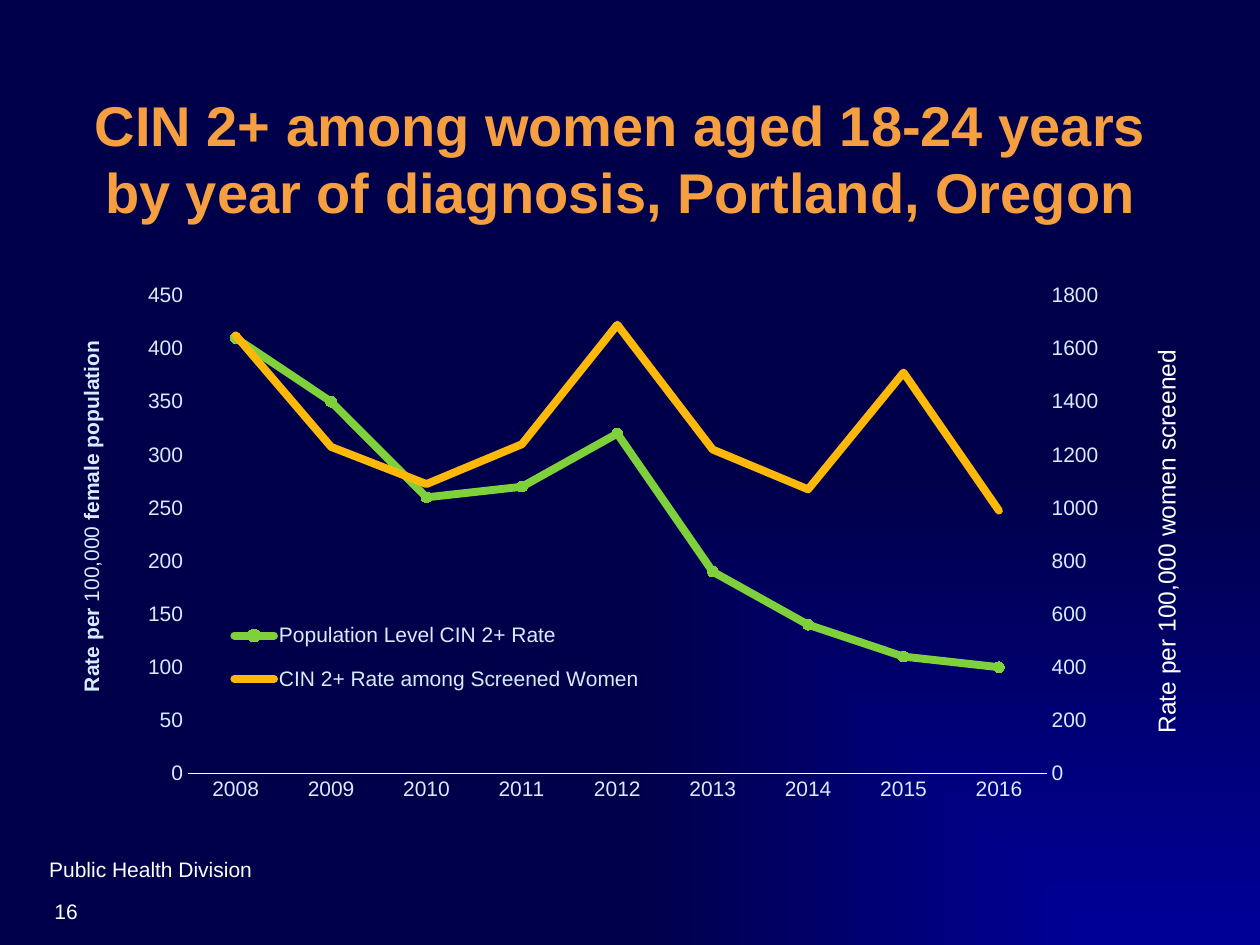
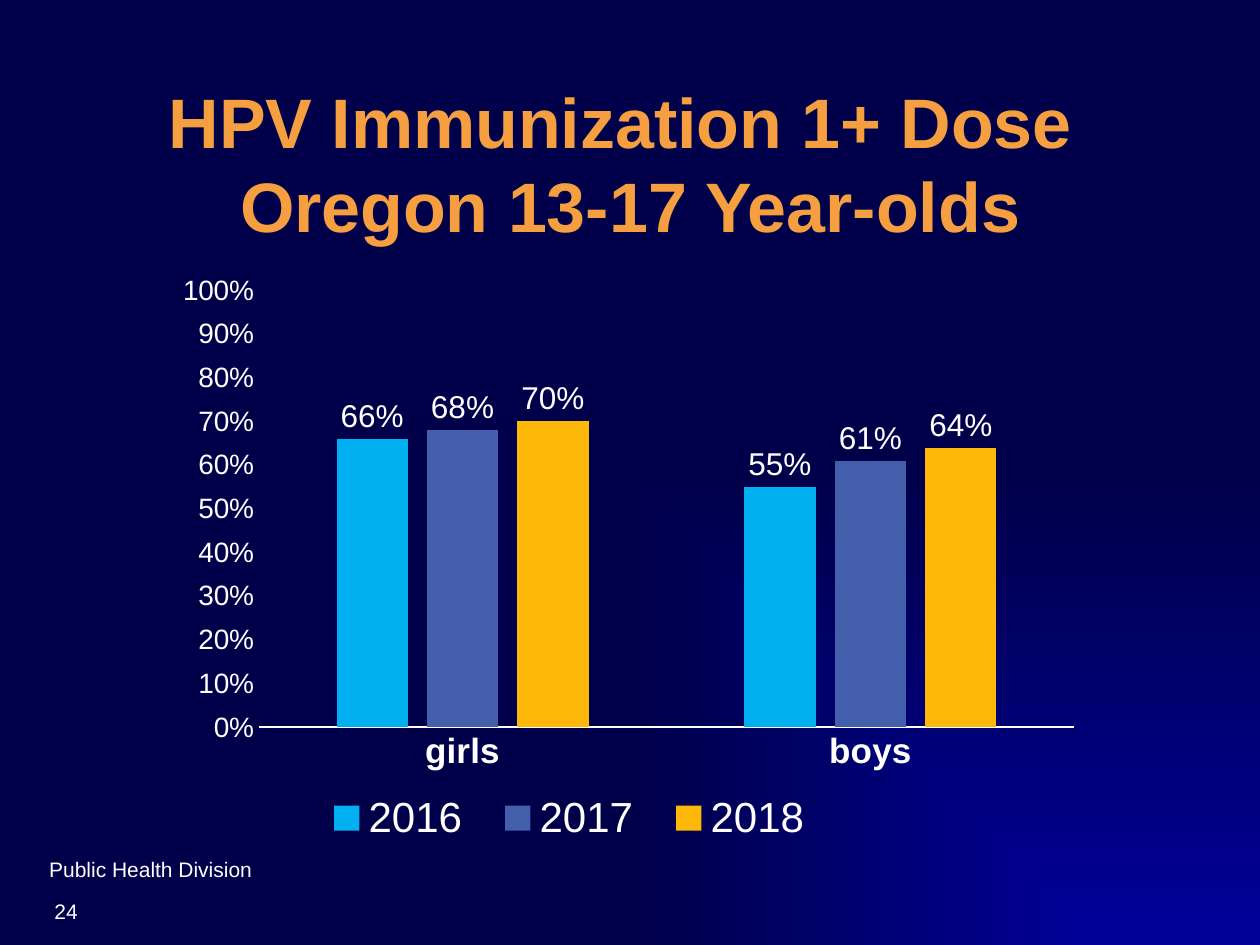
from copy import deepcopy

from lxml.etree import SubElement
from pptx import Presentation
from pptx.chart.data import CategoryChartData
from pptx.dml.color import RGBColor
from pptx.enum.chart import (XL_CHART_TYPE, XL_LABEL_POSITION, XL_LEGEND_POSITION,
                             XL_MARKER_STYLE, XL_TICK_MARK)
from pptx.enum.text import MSO_ANCHOR, MSO_AUTO_SIZE, PP_ALIGN
from pptx.oxml import parse_xml
from pptx.oxml.ns import nsdecls, qn
from pptx.util import Inches, Pt

CELL = Inches(1) // 12  # the slide is a grid of 120 columns by 90 rows
WHITE, ICE, ORANGE = "FFFFFF", "D6ECFF", "F59F41"
GREEN, AMBER, SKY, BLUE = "7FD13B", "FEB80A", "00B0F0", "435EAA"
DEEP, GLOW = "00004A", "000099"

FOOTER = {"size": 12, "color": WHITE}
TITLE_32 = {"size": 32, "color": ORANGE, "bold": True}
TITLE_40 = {**TITLE_32, "size": 40}
LINE_TEXT = {"size": 12, "color": ICE, "bold": False}


def rgb(hex_text):
    return RGBColor.from_string(hex_text)


def style_font(font, values):
    for name, value in {"name": "Arial", **values}.items():
        if name == "color":
            font.color.rgb = rgb(value)
        else:
            setattr(font, name, Pt(value) if name == "size" else value)


def grid(*cells):
    return [round(cell * CELL) for cell in cells]


def set_background(master):
    """Give every slide a glow that spreads from the bottom right corner."""
    master.background.fill.solid()
    frame = master._element.find(".//" + qn("p:bgPr"))
    stops = "".join(
        f'<a:gs pos="{position}"><a:srgbClr val="{color}"/></a:gs>'
        for position, color in ((0, GLOW), (100000, DEEP)))
    gradient = parse_xml(
        f'<a:gradFill {nsdecls("a")} rotWithShape="1"><a:gsLst>{stops}</a:gsLst>'
        '<a:path path="rect"><a:fillToRect l="100000" t="100000"/></a:path></a:gradFill>')
    frame.replace(frame.find(qn("a:solidFill")), gradient)


def add_text(page, cells, text, values, rotation=0):
    box = page.shapes.add_textbox(*grid(*cells))
    box.rotation = rotation
    box.text_frame.word_wrap = True
    span = box.text_frame.paragraphs[0].add_run()
    span.text = text
    style_font(span.font, values)


def add_page(deck, title, title_cells, title_style, number):
    page = deck.slides.add_slide(deck.slide_layouts[5])
    box = page.shapes.title
    for name, value in zip(("left", "top", "width", "height"), grid(*title_cells)):
        setattr(box, name, value)
    frame = box.text_frame
    frame.text = title
    frame.auto_size = MSO_AUTO_SIZE.NONE
    frame.vertical_anchor = MSO_ANCHOR.MIDDLE
    frame.paragraphs[0].alignment = PP_ALIGN.CENTER
    for span in frame.paragraphs[0].runs:
        style_font(span.font, title_style)
    add_text(page, (3.5, 81, 46, 3.25), "Public Health Division", FOOTER)
    add_text(page, (4, 85, 25, 4), number, FOOTER)
    return page


def place(part, index, target=None, **shares):
    """Lay out a chart part by shares of the chart's size."""
    for old in part.findall(qn("c:layout")):
        part.remove(old)
    layout = parse_xml(f'<c:layout {nsdecls("c")}><c:manualLayout/></c:layout>')
    manual = layout[0]
    settings = {"layoutTarget": target} if target else {}
    settings.update({f"{key}Mode": "edge" for key in shares if key in "xy"})
    settings.update(shares)
    for name, value in settings.items():
        SubElement(manual, qn(f"c:{name}")).set("val", str(value))
    part.insert(index, layout)


def add_chart(page, kind, cells, categories, series, number_format):
    """series holds (name, values) pairs."""
    data = CategoryChartData(number_format=number_format)
    data.categories = categories
    for name, values in series:
        data.add_series(name, values)
    chart = page.shapes.add_chart(kind, *grid(*cells), data).chart
    chart.has_title = False
    style_font(chart.font, {"size": 10, "color": WHITE})
    chart.plots[0].vary_by_categories = False
    return chart


def style_axes(chart, category_style, value_style, line_color, top, step, number_format):
    values = chart.value_axis
    for axis, style in ((chart.category_axis, category_style), (values, value_style)):
        axis.has_major_gridlines = False
        axis.major_tick_mark = axis.minor_tick_mark = XL_TICK_MARK.NONE
        style_font(axis.tick_labels.font, style)
    line = chart.category_axis.format.line
    line.color.rgb = rgb(line_color)
    line.width = Pt(0.75)
    values.format.line.fill.background()
    values.minimum_scale, values.maximum_scale, values.major_unit = 0, top, step
    values.tick_labels.number_format = number_format
    values.tick_labels.number_format_is_linked = False


def add_legend(chart, style, **shares):
    chart.has_legend = True
    legend = chart.legend
    legend.position = XL_LEGEND_POSITION.BOTTOM
    legend.include_in_layout = False
    style_font(legend.font, style)
    place(legend._element, 1, **shares)


def style_line(series, color):
    series.smooth = False
    line = series.format.line
    line.color.rgb = rgb(color)
    line.width = Pt(4.5)
    series._element.find(f"{qn('c:spPr')}/{qn('a:ln')}").set("cap", "rnd")
    series.marker.style = XL_MARKER_STYLE.NONE


def add_right_axis(chart, top, step):
    """Move the last series to a second line plot with its own value axis."""
    area = chart._chartSpace.find(".//" + qn("c:plotArea"))
    first_plot = area.find(qn("c:lineChart"))
    second_plot = deepcopy(first_plot)
    first_plot.remove(first_plot.findall(qn("c:ser"))[-1])
    second_plot.remove(second_plot.find(qn("c:ser")))
    first_plot.addnext(second_plot)
    category = deepcopy(area.find(qn("c:catAx")))
    value = deepcopy(area.find(qn("c:valAx")))
    area.find(qn("c:valAx")).addnext(value)
    value.addnext(category)
    ids = ("50010", "50020")
    for link, axis_id in zip(second_plot.findall(qn("c:axId")), ids):
        link.set("val", axis_id)
    for axis, own, other in ((category, *ids), (value, *reversed(ids))):
        axis.find(qn("c:axId")).set("val", own)
        axis.find(qn("c:crossAx")).set("val", other)
    category.find(qn("c:delete")).set("val", "1")
    for tag, setting in (("axPos", "r"), ("crosses", "max"), ("majorUnit", str(step))):
        value.find(qn(f"c:{tag}")).set("val", setting)
    value.find(f"{qn('c:scaling')}/{qn('c:max')}").set("val", str(top))


def add_axis_title(axis, spans, **shares):
    """spans holds (text, bold) pairs."""
    title = axis.axis_title
    para = title.text_frame.paragraphs[0]
    for text, bold in spans:
        span = para.add_run()
        span.text = text
        style_font(span.font, {**LINE_TEXT, "bold": bold})
    body = title._element.find(".//" + qn("a:bodyPr"))
    body.set("rot", "-5400000")
    body.set("vert", "horz")
    place(title._element, 1, **shares)


def add_rate_chart(page):
    chart = add_chart(
        page, XL_CHART_TYPE.LINE_MARKERS_STACKED, (4, 24, 103, 54),
        [str(year) for year in range(2008, 2017)],
        [("Population Level CIN 2+ Rate", (410, 350, 260, 270, 320, 190, 140, 110, 100)),
         ("CIN 2+ Rate among Screened Women",
          (1650, 1230, 1090, 1240, 1690, 1220, 1070, 1510, 990))], "0")
    style_axes(chart, LINE_TEXT, LINE_TEXT, "F9FCFF", 450, 50, "0")
    population, screened = chart.plots[0].series
    style_line(population, GREEN)
    style_line(screened, AMBER)
    marker = population.marker
    marker.style, marker.size = XL_MARKER_STYLE.CIRCLE, 6
    marker.format.fill.solid()
    marker.format.fill.fore_color.rgb = rgb("79E023")
    marker.format.line.color.rgb = rgb(GREEN)
    add_right_axis(chart, 1800, 200)
    add_axis_title(chart.value_axis, [("Rate per ", True), ("100,000", False),
                                      (" female population", True)], x=0.03, y=0.15)
    add_legend(chart, LINE_TEXT, x=0.16, y=0.62, w=0.41, h=0.19)
    place(chart._chartSpace.find(".//" + qn("c:plotArea")), 0, "inner",
          x=0.135, y=0.077, w=0.794, h=0.843)


def add_dose_chart(page):
    chart = add_chart(
        page, XL_CHART_TYPE.COLUMN_CLUSTERED, (15.8, 25, 88.3, 56.6), ["girls", "boys"],
        [("2016", (0.66, 0.55)), ("2017", (0.68, 0.61)), ("2018", (0.7, 0.64))], "0%")
    style_axes(chart, {"size": 20, "color": WHITE, "bold": True},
               {"size": 16, "color": WHITE}, WHITE, 1, 0.1, "0%")
    plot = chart.plots[0]
    plot.gap_width, plot.overlap = 219, -27
    for series, color in zip(plot.series, (SKY, BLUE, AMBER)):
        series.format.fill.solid()
        series.format.fill.fore_color.rgb = rgb(color)
        labels = series.data_labels
        labels.show_value = True
        labels.number_format, labels.number_format_is_linked = "0%", False
        labels.position = XL_LABEL_POSITION.OUTSIDE_END
        style_font(labels.font, {"size": 18, "color": WHITE})
    add_legend(chart, {"size": 24, "color": WHITE}, x=0.15, y=0.88, w=0.57, h=0.11)
    place(chart._chartSpace.find(".//" + qn("c:plotArea")), 0, "inner",
          x=0.1, y=0.047, w=0.88, h=0.735)


def main():
    deck = Presentation()
    deck.slide_width, deck.slide_height = grid(120, 90)
    set_background(deck.slide_master)

    page = add_page(
        deck, "CIN 2+ among women aged 18-24 years by year of diagnosis, Portland, Oregon",
        (7, 7, 104.25, 16), TITLE_32, "16")
    add_rate_chart(page)
    add_text(page, (87.1, 45, 48, 4.1), "Rate per 100,000 women screened",
             {"size": 14, "color": WHITE}, rotation=270)

    page = add_page(deck, "HPV Immunization 1+ Dose \vOregon 13-17 Year-olds",
                    (9, 8, 102, 15), TITLE_40, "24")
    add_dose_chart(page)
    deck.save("out.pptx")


if __name__ == "__main__":
    main()
